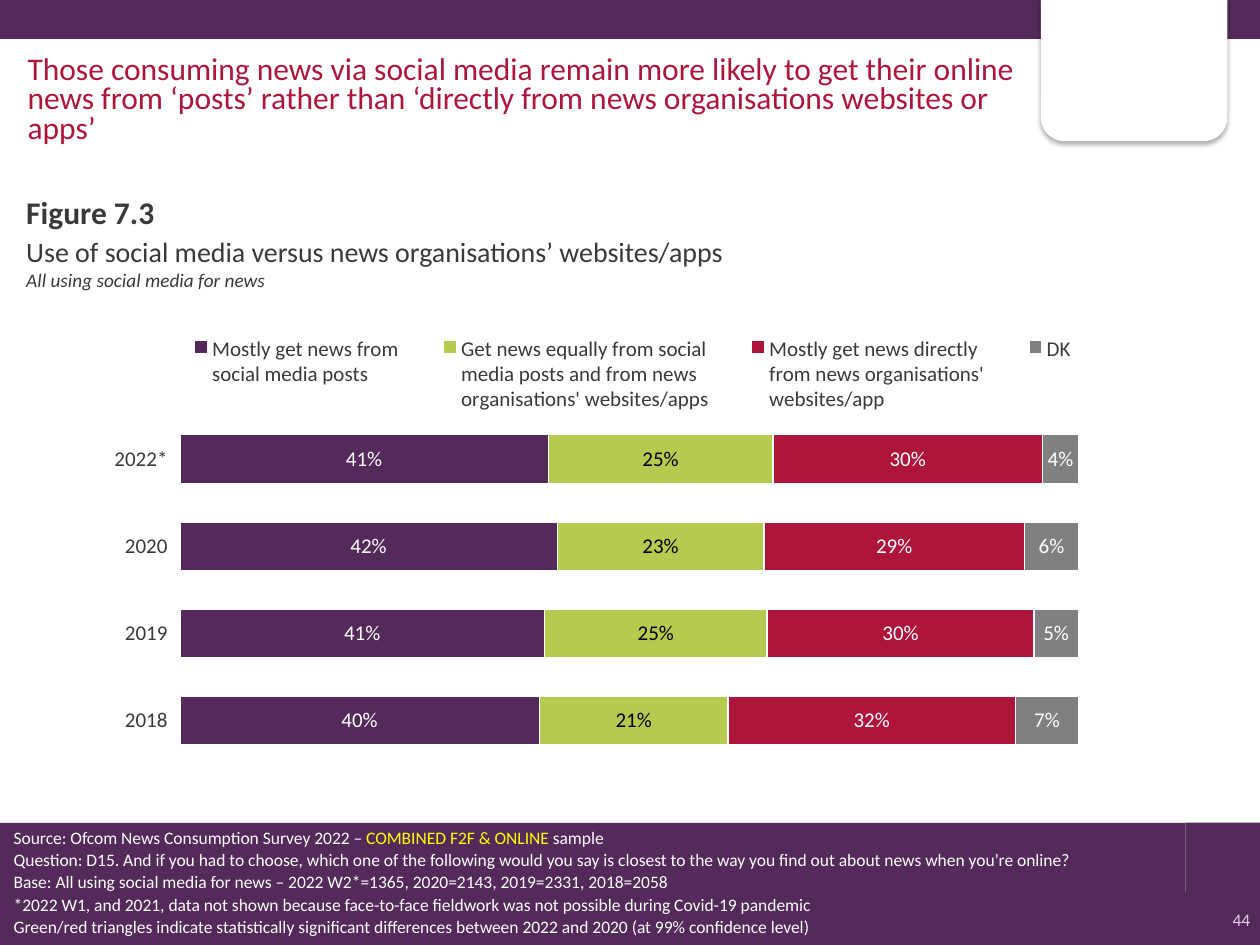
from lxml import etree
from pptx import Presentation
from pptx.chart.data import CategoryChartData
from pptx.dml.color import RGBColor
from pptx.enum.chart import (XL_CHART_TYPE, XL_LABEL_POSITION, XL_LEGEND_POSITION,
                             XL_TICK_LABEL_POSITION, XL_TICK_MARK)
from pptx.enum.shapes import MSO_SHAPE
from pptx.enum.text import MSO_ANCHOR, PP_ALIGN
from pptx.oxml import parse_xml
from pptx.oxml.ns import nsdecls
from pptx.util import Inches, Pt

WIDTH, HEIGHT = 10, 7.5
FONT = "Calibri"
PURPLE = RGBColor(0x53, 0x2A, 0x59)
LILAC = RGBColor(0xE3, 0xCC, 0xE7)
GREEN = RGBColor(0xB6, 0xCA, 0x4F)
CRIMSON = RGBColor(0xAE, 0x15, 0x3B)
GREY = RGBColor(0x80, 0x80, 0x80)
CHARCOAL = RGBColor(0x38, 0x39, 0x3A)
YELLOW = RGBColor(0xFF, 0xFF, 0x00)
WHITE = RGBColor(0xFF, 0xFF, 0xFF)
BLACK = RGBColor(0, 0, 0)

FOOTER_TOP, FOOTER_SPLIT = 6.53, 9.41
BANDS = [
    (0, 7.08, WIDTH, HEIGHT - 7.08),
    (0, 0, WIDTH, 0.31),
    (FOOTER_SPLIT, FOOTER_TOP, WIDTH - FOOTER_SPLIT, 0.6),
    (0, FOOTER_TOP, FOOTER_SPLIT, 0.95),
]
LOGO_TAB = (8.26, 0, 1.48, 1.12)

# Each text: place, paragraphs made of (text, format) spans, paragraph format, anchor
FOOTNOTE = {"size": Pt(10), "color": WHITE}
TEXTS = [
    ((0.11, 1.81, 9.89, 0.6),
     [[("Use of social media versus news organisations’ websites/apps",
        {"size": Pt(16), "color": CHARCOAL})],
      [("All using social media for news",
        {"size": Pt(11), "italic": True, "color": CHARCOAL})]],
     {}, MSO_ANCHOR.TOP),
    ((0.12, 0.4, 8.12, 1.08),
     [[("Those consuming news via social media remain more likely to get their online "
        "news from ‘posts’ rather than ‘directly from news organisations websites or apps’",
        {"size": Pt(18), "color": CRIMSON})]],
     {"line_spacing": Pt(17)}, MSO_ANCHOR.TOP),
    ((0.11, 1.48, 9.89, 0.33),
     [[("Figure 7.3", {"size": Pt(18), "bold": True, "color": CHARCOAL})]],
     {}, MSO_ANCHOR.TOP),
    ((0.01, FOOTER_TOP, 9.89, 0.96),
     [[("Source: Ofcom News Consumption Survey 2022 – ", FOOTNOTE),
       ("COMBINED F2F & ONLINE ", {**FOOTNOTE, "color": YELLOW}),
       ("sample", FOOTNOTE)],
      [("Question: D15. And if you had to choose, which one of the following would you say "
        "is closest to the way you find out about news when you’re online?", FOOTNOTE)],
      [("Base: All using social media for news – "
        "2022 W2*=1365, 2020=2143, 2019=2331, 2018=2058", FOOTNOTE)],
      [("*2022 W1, and 2021, data not shown because face-to-face fieldwork was not possible "
        "during Covid-19 pandemic", FOOTNOTE)],
      [("Green/red triangles indicate statistically significant differences between "
        "2022 and 2020 (at 99% confidence level)", FOOTNOTE)]],
     {"line_spacing": 0.9, "space_before": Pt(2)}, MSO_ANCHOR.TOP),
    ((9.57, 7.16, 0.45, 0.28),
     [[("44", {"size": Pt(10), "color": LILAC})]],
     {"alignment": PP_ALIGN.RIGHT}, MSO_ANCHOR.MIDDLE),
]

CHART_PLACE = (0.37, 2.47, 9.12, 3.85)
PLOT_LAYOUT = (0.116, 0.215, 0.782, 0.719)
LEGEND_LAYOUT = (0.1, 0.04, 0.82, 0.18)
YEARS = ["2022*", "2020", "2019", "2018"]
SERIES = [
    ("Mostly get news from \nsocial media posts",
     (0.41, 0.42, 0.41, 0.40), PURPLE, WHITE),
    ("Get news equally from social \nmedia posts and from news\norganisations' websites/apps",
     (0.25, 0.23, 0.25, 0.21), GREEN, BLACK),
    ("Mostly get news directly\nfrom news organisations' \nwebsites/app",
     (0.30, 0.29, 0.30, 0.32), CRIMSON, WHITE),
    ("DK", (0.04, 0.06, 0.05, 0.07), GREY, WHITE),
]


def inches(place):
    return [Inches(length) for length in place]


def set_font(font, color, **values):
    font.name = FONT
    font.color.rgb = color
    for name, value in values.items():
        setattr(font, name, value)


def add_block(slide, preset, place, color):
    block = slide.shapes.add_shape(preset, *inches(place))
    block.shadow.inherit = False
    block.fill.solid()
    block.fill.fore_color.rgb = color
    block.line.fill.background()
    return block


def add_logo_tab(slide):
    tab = add_block(slide, MSO_SHAPE.ROUND_2_SAME_RECTANGLE, LOGO_TAB, WHITE)
    tab.rotation = 180
    effects = tab.element.spPr.find("{*}effectLst")
    effects.append(parse_xml(
        f'<a:outerShdw {nsdecls("a")} blurRad="{Pt(3.1)}" dist="{Pt(1.8)}" dir="5400000" '
        'rotWithShape="0"><a:srgbClr val="000000"><a:alpha val="35000"/></a:srgbClr>'
        '</a:outerShdw>'))


def add_text(slide, place, paragraphs, para_format, anchor):
    frame = slide.shapes.add_textbox(*inches(place)).text_frame
    frame.word_wrap = True
    frame.vertical_anchor = anchor
    for index, spans in enumerate(paragraphs):
        para = frame.add_paragraph() if index else frame.paragraphs[0]
        for name, value in para_format.items():
            if index or name != "space_before":
                setattr(para, name, value)
        for text, font_format in spans:
            span = para.add_run()
            span.text = text
            set_font(span.font, **font_format)


def set_layout(element, shares, inner=False):
    """Fix a chart part's place as shares of the chart's size."""
    layout = element.find("{*}layout")
    if layout is None:
        layout = parse_xml(f'<c:layout {nsdecls("c")}/>')
        before = element.find("{*}legendPos")
        if before is None:
            element.insert(0, layout)
        else:
            before.addnext(layout)
    for child in list(layout):
        layout.remove(child)
    namespace = etree.QName(layout).namespace
    manual = etree.SubElement(layout, f"{{{namespace}}}manualLayout")
    settings = [("layoutTarget", "inner")] if inner else []
    settings += [("xMode", "edge"), ("yMode", "edge"), *zip("xywh", shares)]
    for name, value in settings:
        etree.SubElement(manual, f"{{{namespace}}}{name}", val=str(value))


def add_news_chart(slide):
    data = CategoryChartData(number_format="0%")
    data.categories = YEARS
    for name, values, _, _ in SERIES:
        data.add_series(name, values)
    chart = slide.shapes.add_chart(
        XL_CHART_TYPE.BAR_STACKED_100, *inches(CHART_PLACE), data).chart
    chart.has_title = False
    set_font(chart.font, CHARCOAL, size=Pt(12))

    years = chart.category_axis
    years.reverse_order = True
    years.format.line.fill.background()
    years.major_tick_mark = XL_TICK_MARK.OUTSIDE
    years.tick_label_position = XL_TICK_LABEL_POSITION.LOW
    shares = chart.value_axis
    shares.visible = False
    shares.has_major_gridlines = False
    shares.major_unit = 0.2

    plot = chart.plots[0]
    plot.gap_width, plot.overlap, plot.vary_by_categories = 80, 100, False
    for series, (_, _, color, label_color) in zip(plot.series, SERIES):
        series.format.fill.solid()
        series.format.fill.fore_color.rgb = color
        series.format.line.color.rgb = WHITE
        series.format.line.width = Pt(0.75)
        labels = series.data_labels
        set_font(labels.font, label_color, size=Pt(12))
        labels.show_value = True
        labels.number_format, labels.number_format_is_linked = "0%", False
        labels.position = XL_LABEL_POSITION.CENTER

    chart.has_legend = True
    legend = chart.legend
    legend.position = XL_LEGEND_POSITION.BOTTOM
    legend.include_in_layout = False
    set_font(legend.font, CHARCOAL, size=Pt(12))
    chart_space = chart.element
    set_layout(chart_space.find(".//{*}plotArea"), PLOT_LAYOUT, inner=True)
    set_layout(chart_space.find(".//{*}legend"), LEGEND_LAYOUT)


def main():
    deck = Presentation()
    deck.slide_width, deck.slide_height = inches((WIDTH, HEIGHT))
    slide = deck.slides.add_slide(deck.slide_layouts[6])
    for place in BANDS:
        add_block(slide, MSO_SHAPE.RECTANGLE, place, PURPLE)
    add_logo_tab(slide)
    add_news_chart(slide)
    for text in TEXTS:
        add_text(slide, *text)
    deck.save("out.pptx")


if __name__ == "__main__":
    main()
